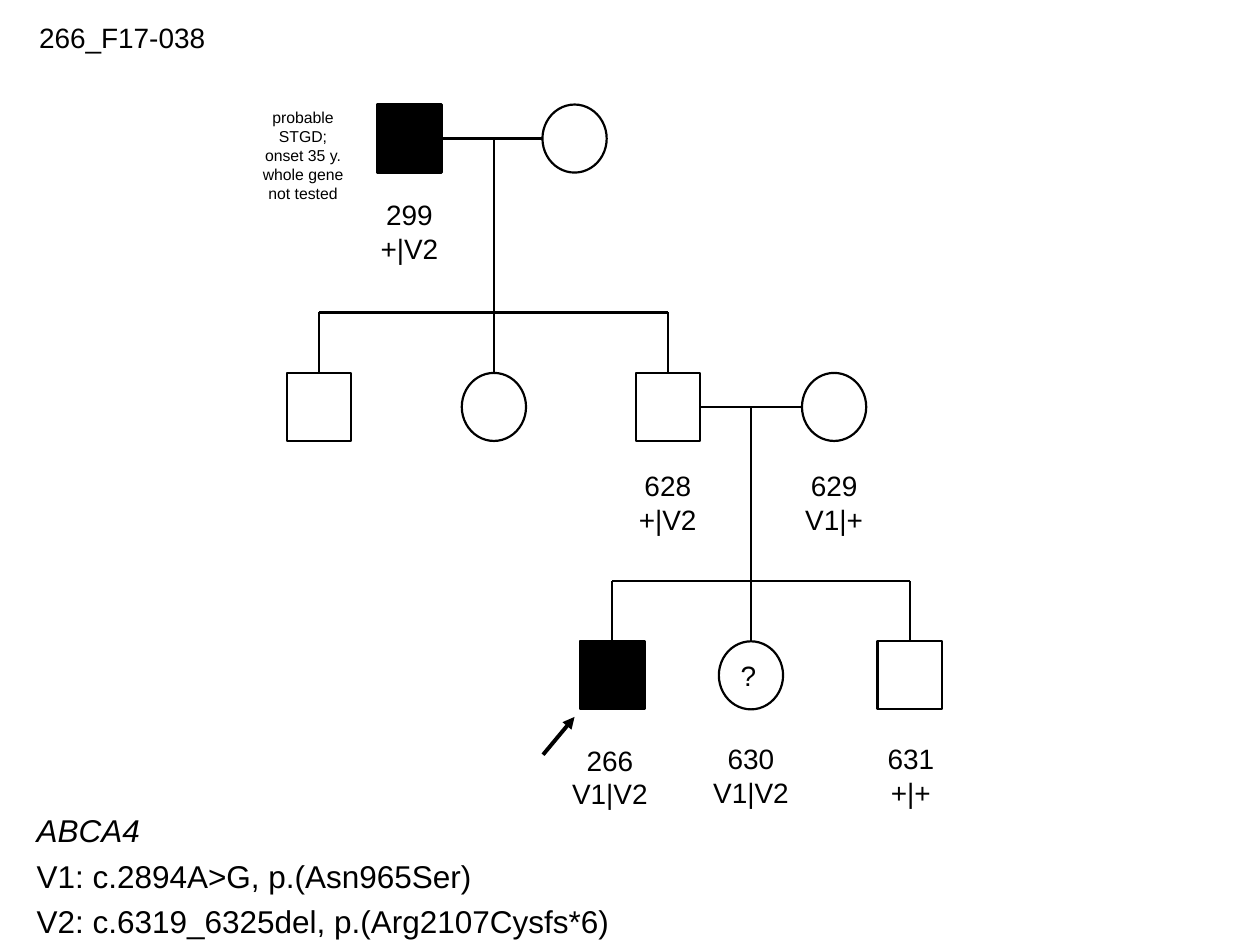
from lxml import etree
from pptx import Presentation
from pptx.dml.color import RGBColor
from pptx.enum.shapes import MSO_CONNECTOR, MSO_SHAPE
from pptx.enum.text import MSO_ANCHOR, MSO_AUTO_SIZE, PP_ALIGN
from pptx.oxml.ns import qn
from pptx.util import Inches, Pt

BLACK, WHITE = "000000", "FFFFFF"
SYMBOL_WIDTH, SYMBOL_HEIGHT = 0.51, 0.54
MATING_OFFSET = 0.27
SIBLING_DROP = 0.48
LABEL_HEIGHT = 0.64


def color(value):
    return RGBColor.from_string(value)


def set_text(shape, lines, size=16, align=PP_ALIGN.LEFT, anchor=MSO_ANCHOR.TOP,
             wrap=True, space=0, italic_first=False):
    frame = shape.text_frame
    frame.word_wrap = wrap
    frame.auto_size = MSO_AUTO_SIZE.NONE
    frame.vertical_anchor = anchor
    frame.text = "\n".join(lines)
    for index, paragraph in enumerate(frame.paragraphs):
        properties = paragraph._p.get_or_add_pPr()
        properties.set("marL", "0")
        properties.set("indent", "0")
        etree.SubElement(properties, qn("a:buNone"))
        paragraph.alignment = align
        paragraph.space_before = Pt(space if index else 0)
        font = paragraph.font
        font.size, font.name = Pt(size), "Arial"
        font.italic = italic_first and index == 0
        font.color.rgb = color(BLACK)


def place(shape, left, top, width, height):
    shape.left, shape.top = Inches(left), Inches(top)
    shape.width, shape.height = Inches(width), Inches(height)


def add_text(slide, left, top, width, height, lines, **text_format):
    box = slide.shapes.add_textbox(*map(Inches, (left, top, width, height)))
    set_text(box, lines, **text_format)


def add_line(slide, start, end, width=1.25, arrow=False):
    line = slide.shapes.add_connector(
        MSO_CONNECTOR.STRAIGHT, *map(Inches, (*start, *end)))
    line.line.color.rgb = color(BLACK)
    line.line.width = Pt(width)
    if arrow:
        etree.SubElement(line.line._get_or_add_ln(), qn("a:tailEnd"), type="triangle")
    etree.SubElement(line._element.spPr, qn("a:effectLst"))


def add_person(slide, center, top, sex, affected=False, label=(), label_offset=0.71,
               label_shift=0, mark=None):
    """Draw a square (male) or circle (female), with its number and genotype below."""
    preset = MSO_SHAPE.RECTANGLE if sex == "male" else MSO_SHAPE.OVAL
    symbol = slide.shapes.add_shape(
        preset, Inches(center - SYMBOL_WIDTH / 2), Inches(top),
        Inches(SYMBOL_WIDTH), Inches(SYMBOL_HEIGHT))
    symbol.shadow.inherit = False
    symbol.fill.solid()
    symbol.fill.fore_color.rgb = color(BLACK if affected else WHITE)
    symbol.line.color.rgb = color(BLACK)
    symbol.line.width = Pt(1.25)
    if mark:
        set_text(symbol, [mark], anchor=MSO_ANCHOR.MIDDLE, wrap=False)
    if label:
        width = 0.81 if label[1] == "V1|V2" else 0.66
        add_text(slide, center + label_shift - width / 2, top + label_offset, width,
                 LABEL_HEIGHT, label, align=PP_ALIGN.CENTER, wrap=False)


def add_couple_line(slide, father, mother, top):
    y = top + MATING_OFFSET
    add_line(slide, (father + SYMBOL_WIDTH / 2, y), (mother - SYMBOL_WIDTH / 2, y), 1.5)


def add_sibship_lines(slide, centers, parents_top, top, bar_width=1.25):
    """Join the parents' line to three children, the middle one straight below."""
    first, middle, last = centers
    bar = top - SIBLING_DROP
    add_line(slide, (middle, parents_top + MATING_OFFSET), (middle, top))
    add_line(slide, (first, bar), (last, bar), bar_width)
    for center in (first, last):
        add_line(slide, (center, bar), (center, top))


def add_pedigree(slide, left, top):
    grandfather, grandmother = left + 0.98, left + 2.29
    siblings = left + 0.26, left + 1.65, left + 3.03
    father, mother = siblings[2], left + 4.35
    children = left + 2.59, left + 3.69, left + 4.95
    second, third = top + 2.13, top + 4.26

    add_couple_line(slide, grandfather, grandmother, top)
    add_couple_line(slide, father, mother, second)
    add_sibship_lines(slide, siblings, top, second)
    add_sibship_lines(slide, children, second, third, 1.5)

    add_person(slide, grandfather, top, "male", True, ["299", "+|V2"], 0.69)
    add_person(slide, grandmother, top, "female")
    add_person(slide, siblings[0], second, "male")
    add_person(slide, siblings[1], second, "female")
    add_person(slide, father, second, "male", label=["628", "+|V2"])
    add_person(slide, mother, second, "female", label=["629", "V1|+"])
    add_person(slide, children[0], third, "male", True, ["266", "V1|V2"], 0.76, -0.02)
    add_person(slide, children[1], third, "female", label=["630", "V1|V2"],
               label_offset=0.75, mark="?")
    add_person(slide, children[2], third, "male", label=["631", "+|+"],
               label_offset=0.75, label_shift=0.01)

    add_line(slide, (left + 2.04, third + 0.9), (left + 2.29, third + 0.6), 2.25, arrow=True)
    add_text(slide, left - 0.34, top - 0.02, 0.95, 0.86,
             ["probable STGD;", "onset 35 y.", "whole gene not tested"],
             size=9, align=PP_ALIGN.CENTER)


def add_title(slide, left, top, width, height):
    title = slide.shapes.title
    place(title, left, top, width, height)
    set_text(title, ["266_F17-038"], wrap=False)


def add_variants(slide, left, top, width, height):
    body = slide.placeholders[1]
    place(body, left, top, width, height)
    set_text(body, ["ABCA4", "V1: c.2894A>G, p.(Asn965Ser)",
                    "V2: c.6319_6325del, p.(Arg2107Cysfs*6)"],
             size=18, space=4.3, italic_first=True)


def main():
    presentation = Presentation()
    presentation.slide_width, presentation.slide_height = Inches(10), Inches(7.5)
    slide = presentation.slides.add_slide(presentation.slide_layouts[1])
    add_title(slide, 0.21, 0.11, 1.6, 0.37)
    add_pedigree(slide, 2.27, 0.83)
    add_variants(slide, 0.19, 6.39, 6.4, 1.13)
    presentation.save("out.pptx")


if __name__ == "__main__":
    main()
